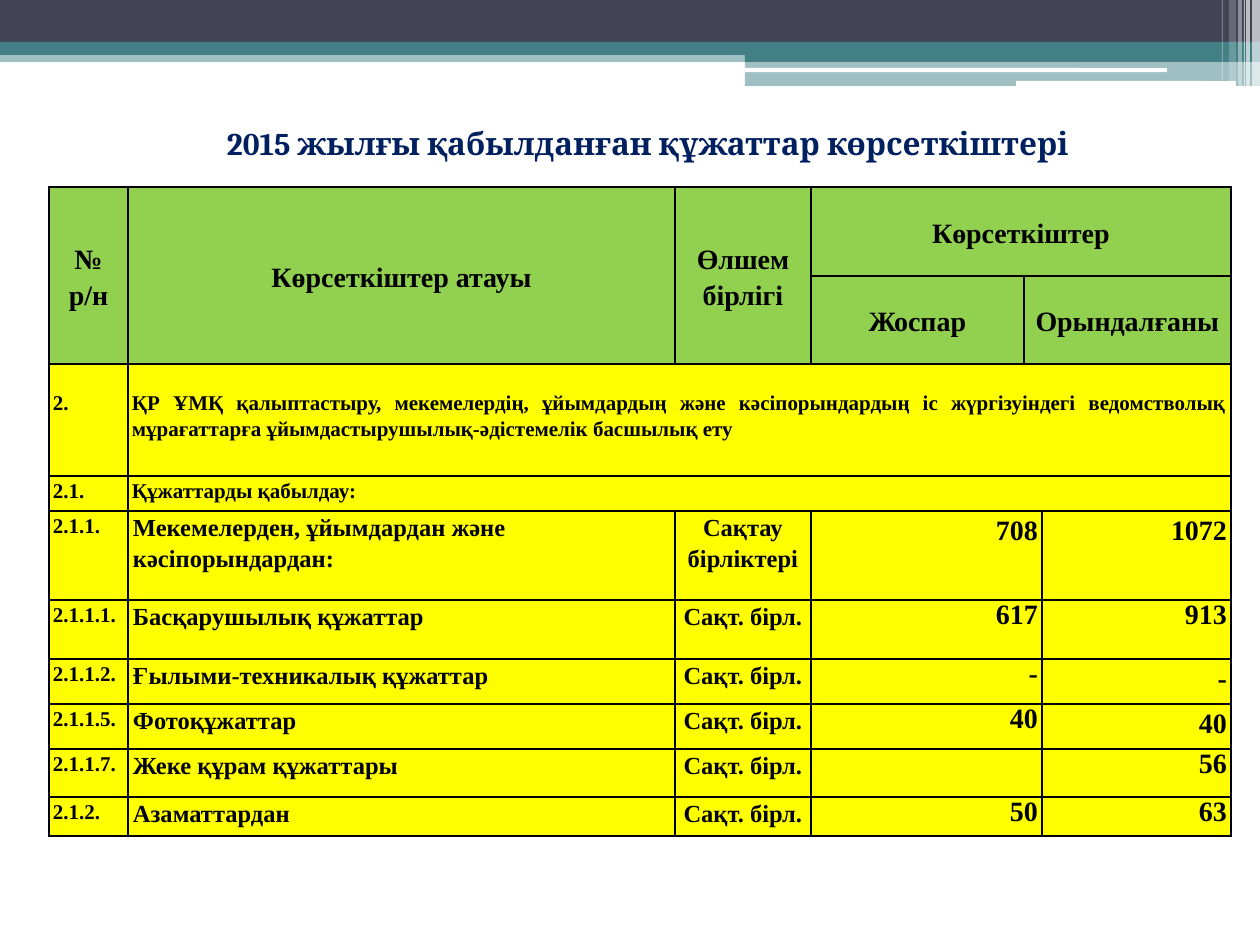
"""Builds the slide on the 2015 indicators of accepted documents."""
from lxml.etree import SubElement
from pptx import Presentation
from pptx.dml.color import RGBColor
from pptx.enum.shapes import MSO_SHAPE
from pptx.enum.text import MSO_ANCHOR, PP_ALIGN
from pptx.oxml.ns import qn
from pptx.util import Pt

PX = 914400 / 126
TITLE = "2015 жылғы қабылданған құжаттар көрсеткіштері"
TITLE_BOX = (190, 118, 916, 50)
TABLE_AT = (49, 187)
COLUMNS = [79, 547, 136, 213, 18, 189]
ROWS = [89, 88, 112, 35, 89, 59, 45, 45, 48, 39]
NAVY, TEAL, WHITE, BLACK = "424456", "438086", "FFFFFF", "000000"
GREEN, YELLOW, TITLE_BLUE = "92D050", "FFFF00", "002060"
SERIF = "Times New Roman"

BANDS = [
    ((0, 50, 1260, 12), TEAL, 50),
    ((0, 0, 1260, 42), NAVY, 100),
    ((0, 42, 1260, 13), TEAL, 100),
    ((745, 49, 515, 13), TEAL, 100),
    ((745, 61, 515, 25), TEAL, 50),
]
LINES = [((745, 68, 422, 4), WHITE, 100), ((1016, 81, 220, 5), WHITE, 100)]
STRIPES = [
    ((1252, 0, 8, 86), WHITE, 65),
    ((1246, 0, 4, 86), WHITE, 65),
    ((1244, 0, 1, 86), WHITE, 60),
    ((1238, 0, 4, 86), WHITE, 40),
    ((1229, 0, 7, 81), WHITE, 20),
    ((1222, 0, 1, 81), WHITE, 30),
]

HEADERS = [
    (0, 0, 2, 1, "№\nр/н"),
    (0, 1, 2, 1, "Көрсеткіштер атауы"),
    (0, 2, 2, 1, "Өлшем бірлігі"),
    (0, 3, 1, 3, "Көрсеткіштер"),
    (1, 3, 1, 1, "Жоспар"),
    (1, 4, 1, 2, "Орындалғаны"),
]
SECTIONS = [
    ("2.", "ҚР ҰМҚ қалыптастыру, мекемелердің, ұйымдардың және кәсіпорындардың "
     "іс жүргізуіндегі ведомстволық мұрағаттарға "
     "ұйымдастырушылық-әдістемелік басшылық ету", "section"),
    ("2.1.", "Құжаттарды қабылдау:", "number"),
]
UNIT = "Сақт. бірл."
INDICATORS = [
    ("2.1.1.", "Мекемелерден, ұйымдардан және кәсіпорындардан:",
     "Сақтау бірліктері", ("708", "loose"), ("1072", "loose")),
    ("2.1.1.1.", "Басқарушылық құжаттар", UNIT, ("617", "value"), ("913", "value")),
    ("2.1.1.2.", "Ғылыми-техникалық құжаттар", UNIT, ("-", "value"), ("-", "loose")),
    ("2.1.1.5.", "Фотоқұжаттар", UNIT, ("40", "value"), ("40", "loose")),
    ("2.1.1.7.", "Жеке құрам құжаттары", UNIT, ("", "value"), ("56", "value")),
    ("2.1.2.", "Азаматтардан", UNIT, ("50", "value"), ("63", "value")),
]

# role: size, alignment, line spacing, side margin, top margin
ROLES = {
    "header": (16, PP_ALIGN.CENTER, 1.15, 5, 0),
    "section": (12, PP_ALIGN.JUSTIFY, 1.15, 4, 24),
    "section number": (12, PP_ALIGN.LEFT, 1.15, 4, 24),
    "number": (12, PP_ALIGN.LEFT, 1.15, 4, 0),
    "name": (14, PP_ALIGN.LEFT, 1.15, 5, 0),
    "unit": (14, PP_ALIGN.CENTER, 1.15, 5, 0),
    "value": (16, PP_ALIGN.RIGHT, 1.0, 4, 0),
    "loose": (16, PP_ALIGN.RIGHT, 1.15, 4, 0),
}


def px(length):
    return round(length * PX)


def rgb(colour):
    return RGBColor.from_string(colour)


def assign(target, values):
    for name, value in values.items():
        setattr(target, name, value)


def paint(fill, colour):
    fill.solid()
    fill.fore_color.rgb = rgb(colour)


def write(frame, text, size, alignment, spacing, face, colour):
    frame.text = text
    for paragraph in frame.paragraphs:
        assign(paragraph, {"alignment": alignment, "line_spacing": spacing,
                           "space_before": Pt(0), "space_after": Pt(0)})
        for run in paragraph.runs:
            assign(run.font, {"size": Pt(size), "bold": True, "name": face})
            run.font.color.rgb = rgb(colour)


def add_bars(slide, preset, bars):
    for box, colour, opacity in bars:
        bar = slide.shapes.add_shape(preset, *map(px, box))
        bar.shadow.inherit = False
        bar.line.fill.background()
        paint(bar.fill, colour)
        if opacity < 100:
            tint = bar.fill._xPr.find(qn("a:solidFill"))[0]
            SubElement(tint, qn("a:alpha"), val=str(opacity * 1000))


def add_borders(cell):
    properties = cell._tc.get_or_add_tcPr()
    for side in ("lnL", "lnR", "lnT", "lnB"):
        line = SubElement(properties, qn(f"a:{side}"), w=str(Pt(1)))
        SubElement(SubElement(line, qn("a:solidFill")), qn("a:srgbClr"), val=BLACK)


def fill_cell(table, row, column, text, role, rows=1, columns=1):
    cell = table.cell(row, column)
    if rows * columns > 1:
        cell.merge(table.cell(row + rows - 1, column + columns - 1))
    size, alignment, spacing, side, top = ROLES[role]
    anchor = MSO_ANCHOR.MIDDLE if role == "header" else MSO_ANCHOR.TOP
    assign(cell, {"margin_left": px(side), "margin_right": px(side),
                  "margin_top": px(top), "vertical_anchor": anchor})
    write(cell.text_frame, text, size, alignment, spacing, SERIF, BLACK)


def add_indicator_table(slide):
    extent = (sum(COLUMNS), sum(ROWS))
    table = slide.shapes.add_table(
        len(ROWS), len(COLUMNS), *map(px, TABLE_AT + extent)).table
    assign(table, {"first_row": False, "horz_banding": False})
    for column, width in zip(table.columns, COLUMNS):
        column.width = px(width)
    for index, height in enumerate(ROWS):
        table.rows[index].height = px(height)
        for cell in table.rows[index].cells:
            assign(cell, {"margin_top": 0, "margin_bottom": 0})
            add_borders(cell)
            paint(cell.fill, GREEN if index < 2 else YELLOW)
    for row, column, rows, columns, text in HEADERS:
        fill_cell(table, row, column, text, "header", rows, columns)
    for row, (number, text, role) in enumerate(SECTIONS, 2):
        number_role = "section number" if role == "section" else "number"
        fill_cell(table, row, 0, number, number_role)
        fill_cell(table, row, 1, text, role, columns=5)
    for row, (number, name, unit, plan, done) in enumerate(INDICATORS, 4):
        fill_cell(table, row, 0, number, "number")
        fill_cell(table, row, 1, name, "name")
        fill_cell(table, row, 2, unit, "unit")
        fill_cell(table, row, 3, *plan, columns=2)
        fill_cell(table, row, 5, *done)


def add_title(slide):
    title = slide.shapes.title
    assign(title, dict(zip(("left", "top", "width", "height"), map(px, TITLE_BOX))))
    assign(title.text_frame, {"word_wrap": True, "vertical_anchor": MSO_ANCHOR.TOP})
    write(title.text_frame, TITLE, 18, PP_ALIGN.CENTER, 1.0, "Cambria", TITLE_BLUE)


def main():
    deck = Presentation()
    assign(deck, {"slide_width": px(1260), "slide_height": px(945)})
    slide = deck.slides.add_slide(deck.slide_layouts[5])
    add_bars(slide, MSO_SHAPE.RECTANGLE, BANDS)
    add_bars(slide, MSO_SHAPE.ROUNDED_RECTANGLE, LINES)
    add_bars(slide, MSO_SHAPE.RECTANGLE, STRIPES)
    add_indicator_table(slide)
    add_title(slide)
    deck.save("out.pptx")


if __name__ == "__main__":
    main()
